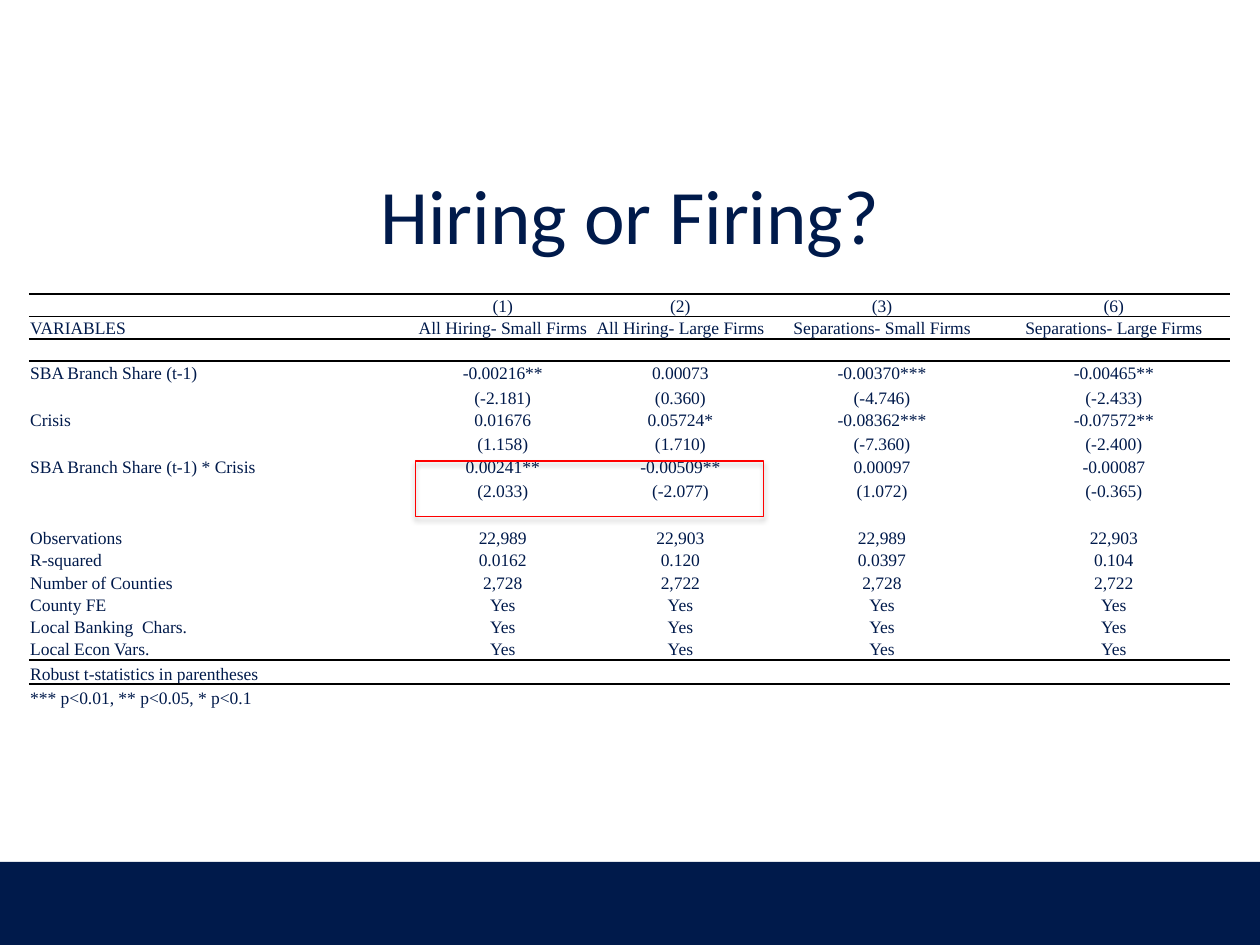
from lxml import etree
from pptx import Presentation
from pptx.dml.color import RGBColor
from pptx.enum import shapes, text
from pptx.oxml import ns
from pptx.util import Inches, Pt

NAVY = RGBColor(0x00, 0x1A, 0x4B)
RED = RGBColor(0xFF, 0x00, 0x00)
BLACK = RGBColor(0x00, 0x00, 0x00)

TITLE = "Hiring or Firing?"
ROWS = [
    [],
    ["", "(1)", "(2)", "(3)", "(6)"],
    ["VARIABLES", "All Hiring- Small Firms", "All Hiring- Large Firms",
     "Separations- Small Firms", "Separations- Large Firms"],
    [],
    ["SBA Branch Share (t-1)", "-0.00216**", "0.00073", "-0.00370***", "-0.00465**"],
    ["", "(-2.181)", "(0.360)", "(-4.746)", "(-2.433)"],
    ["Crisis", "0.01676", "0.05724*", "-0.08362***", "-0.07572**"],
    ["", "(1.158)", "(1.710)", "(-7.360)", "(-2.400)"],
    ["SBA Branch Share (t-1) * Crisis", "0.00241**", "-0.00509**", "0.00097", "-0.00087"],
    ["", "(2.033)", "(-2.077)", "(1.072)", "(-0.365)"],
    [],
    ["Observations", "22,989", "22,903", "22,989", "22,903"],
    ["R-squared", "0.0162", "0.120", "0.0397", "0.104"],
    ["Number of Counties", "2,728", "2,722", "2,728", "2,722"],
    ["County FE"] + ["Yes"] * 4,
    ["Local Banking  Chars."] + ["Yes"] * 4,
    ["Local Econ Vars."] + ["Yes"] * 4,
    ["Robust t-statistics in parentheses"],
    ["*** p<0.01, ** p<0.05, * p<0.1"],
]
WIDTHS = [3.03, 1.46, 1.36, 1.84, 1.84]
TALL = {0, 5, 7, 9, 10, 17, 18}
RULED = {0, 2, 16}  # rows with a line below
PLAIN = "{2D5ABB26-0587-4C30-8999-92F81FD0307C}"  # no style, no grid


def add(parent, tag, **attrs):
    return etree.SubElement(parent, ns.qn(tag), attrs)


def write(para, words, face, size):
    run = para.add_run()
    run.text = words
    run.font.name = face
    run.font.size = Pt(size)
    run.font.color.rgb = NAVY


def rule(cell, tag):
    """Draw a black line on one side of a cell."""
    line = etree.Element(ns.qn(tag), w=str(Pt(1)))
    add(add(line, "a:solidFill"), "a:srgbClr", val=str(BLACK))
    cell._tc.get_or_add_tcPr().insert(0, line)


def box(slide, left, top, width, height):
    rect = slide.shapes.add_shape(shapes.MSO_SHAPE.RECTANGLE, Inches(left),
                                  Inches(top), Inches(width), Inches(height))
    rect.shadow.inherit = False
    return rect


def fill_cell(cell, words, row, col):
    cell.fill.background()
    cell.margin_left = cell.margin_right = cell.margin_top = Inches(0.01)
    cell.margin_bottom = 0
    cell.vertical_anchor = text.MSO_ANCHOR.BOTTOM
    para = cell.text_frame.paragraphs[0]
    para.alignment = text.PP_ALIGN.CENTER if col else text.PP_ALIGN.LEFT
    if words:
        write(para, words, "Times New Roman", 10)
    else:
        add(para._p, "a:endParaRPr", sz="800")
    if row in RULED:
        rule(cell, "a:lnB")
    if row - 1 in RULED:
        rule(cell, "a:lnT")


def add_grid(slide):
    frame = slide.shapes.add_table(len(ROWS), len(WIDTHS), Inches(0.23),
                                   Inches(2.14), Inches(9.54), Inches(3.49))
    grid = frame.table
    grid.first_row = grid.horz_banding = False
    grid._tbl.tblPr.find(ns.qn("a:tableStyleId")).text = PLAIN
    for col, width in zip(grid.columns, WIDTHS):
        col.width = Inches(width)
    for i, words in enumerate(ROWS):
        grid.rows[i].height = Pt(14 if i in TALL else 12.75)
        for j in range(len(WIDTHS)):
            fill_cell(grid.cell(i, j), words[j] if j < len(words) else "", i, j)


def add_title(slide):
    frame = slide.shapes.add_textbox(0, Inches(1.07), Inches(10), Inches(1.25)).text_frame
    frame.word_wrap = True
    frame.vertical_anchor = text.MSO_ANCHOR.MIDDLE
    para = frame.paragraphs[0]
    para.alignment = text.PP_ALIGN.CENTER
    write(para, TITLE, "Calibri", 44)


def add_mark(slide):
    mark = box(slide, 3.3, 3.66, 2.76, 0.44)
    mark.fill.background()
    mark.line.color.rgb = RED
    mark.line.width = Pt(0.75)
    glow = add(mark._element.spPr.find(ns.qn("a:effectLst")), "a:outerShdw",
               blurRad=str(Pt(3.1)), dist=str(Pt(1.8)), dir="5400000", rotWithShape="0")
    add(add(glow, "a:srgbClr", val=str(BLACK)), "a:alpha", val="35000")


def main():
    deck = Presentation()
    deck.slide_width, deck.slide_height = Inches(10), Inches(7.5)
    slide = deck.slides.add_slide(deck.slide_layouts[6])
    band = box(slide, 0, 6.84, 10, 0.66)
    band.fill.solid()
    band.fill.fore_color.rgb = NAVY
    band.line.fill.background()
    add_title(slide)
    add_grid(slide)
    add_mark(slide)
    deck.save("out.pptx")


if __name__ == "__main__":
    main()
